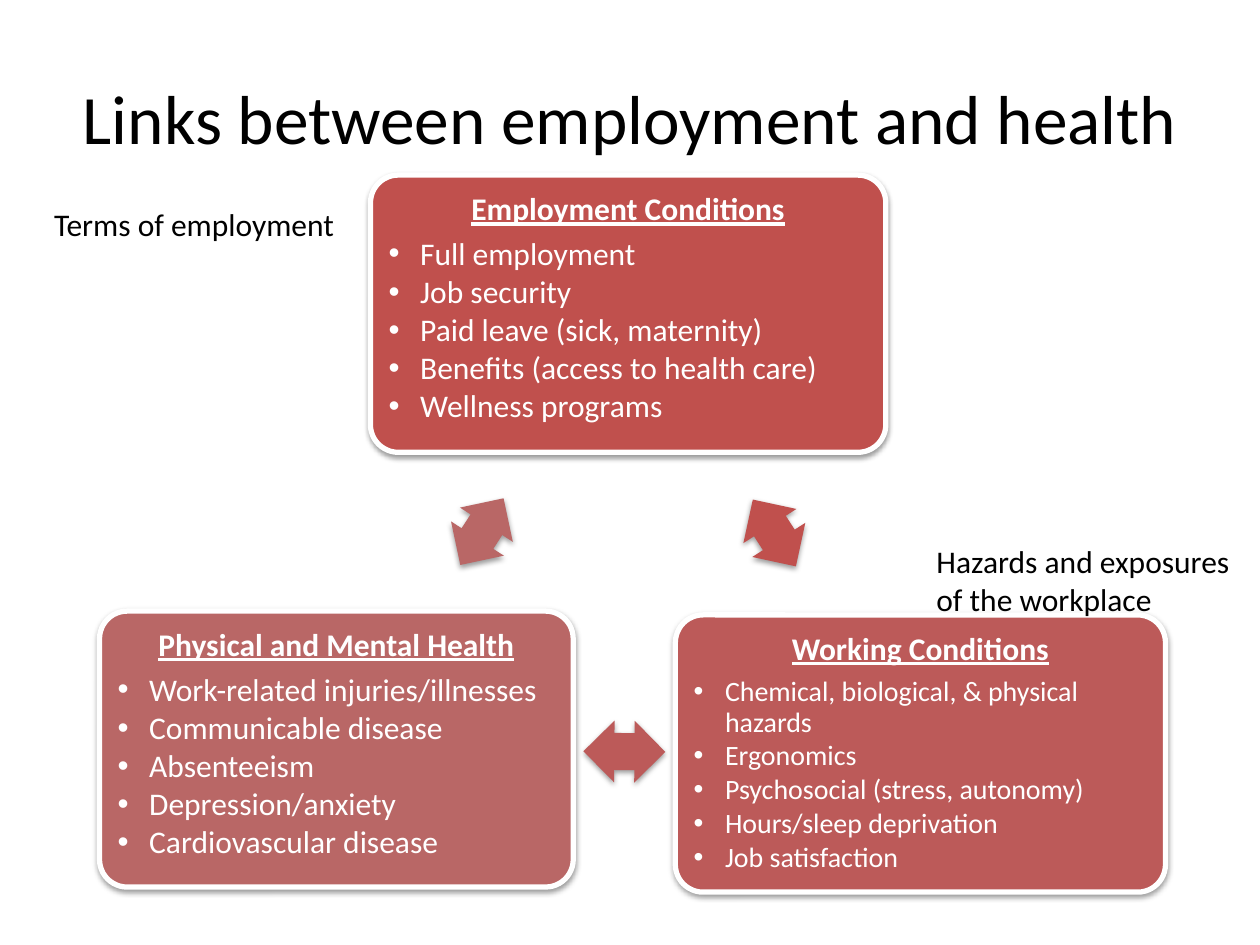
from lxml import etree
from pptx import Presentation
from pptx import util as u
from pptx.dml.color import RGBColor
from pptx.enum import shapes, text
from pptx.oxml import ns

FONT = "Calibri"
WHITE, BLACK = "FFFFFF", "000000"
RED, ROSE, DUSTY_ROSE = "C0504D", "BC5A59", "B96766"

CARDS = [
    ((211.7, 100.1, 294.5, 158.4), RED, "Employment Conditions", 18,
     ["Full employment", "Job security", "Paid leave (sick, maternity)",
      "Benefits (access to health care)", "Wellness programs"]),
    ((385.9, 351.4, 280.1, 158.4), ROSE, "Working Conditions", 16,
     ["Chemical, biological, & physical hazards", "Ergonomics",
      "Psychosocial (stress, autonomy)", "Hours/sleep deprivation",
      "Job satisfaction"]),
    ((56.9, 349.2, 270.7, 157.7), DUSTY_ROSE, "Physical and Mental Health", 18,
     ["Work-related injuries/illnesses", "Communicable disease", "Absenteeism",
      "Depression/anxiety", "Cardiovascular disease"]),
]
ARROWS = [
    ((419.8, 286.6, 45.4, 36), 57.2, RED),
    ((333.4, 411.8, 46.8, 35.3), 180.5, ROSE),
    ((252.7, 285.8, 45.4, 36), 303, DUSTY_ROSE),
]
LABELS = [
    ((23.8, 113.8, 192, 29), "Terms of employment"),
    ((528, 306, 192, 51), "Hazards and exposures of the workplace"),
]


def color(value):
    return RGBColor.from_string(value)


def points(box):
    return [u.Pt(length) for length in box]


def add_run(paragraph, words, size, ink, heading=False):
    run = paragraph.add_run()
    run.text = words
    run.font.name = FONT
    run.font.size = u.Pt(size)
    run.font.bold = heading
    run.font.underline = heading
    run.font.color.rgb = color(ink)


def add_bullet(paragraph):
    properties = paragraph._p.get_or_add_pPr()
    properties.set("marL", str(u.Pt(18)))
    properties.set("indent", str(-u.Pt(18)))
    etree.SubElement(properties, ns.qn("a:buFont"), typeface="Arial")
    etree.SubElement(properties, ns.qn("a:buChar"), char="•")


def add_shadow(shape):
    shape.shadow.inherit = False
    effects = shape._element.spPr.find(ns.qn("a:effectLst"))
    shadow = etree.SubElement(
        effects, ns.qn("a:outerShdw"), blurRad=str(u.Pt(3.1)),
        dist=str(u.Pt(1.6)), dir="5400000", rotWithShape="0")
    ink = etree.SubElement(shadow, ns.qn("a:srgbClr"), val=BLACK)
    etree.SubElement(ink, ns.qn("a:alpha"), val="38000")


def add_filled_shape(slide, kind, box, fill, adjustments):
    shape = slide.shapes.add_shape(kind, *points(box))
    for index, value in enumerate(adjustments):
        shape.adjustments[index] = value
    shape.fill.solid()
    shape.fill.fore_color.rgb = color(fill)
    add_shadow(shape)
    return shape


def add_card(slide, box, fill, heading, size, items):
    card = add_filled_shape(
        slide, shapes.MSO_SHAPE.ROUNDED_RECTANGLE, box, fill, [0.1])
    card.line.color.rgb = color(WHITE)
    card.line.width = u.Pt(3)
    frame = card.text_frame
    frame.word_wrap = True
    frame.vertical_anchor = text.MSO_ANCHOR.TOP
    frame.margin_left = frame.margin_right = u.Pt(5.8)
    frame.margin_top = frame.margin_bottom = u.Pt(5.8)
    paragraph = frame.paragraphs[0]
    paragraph.alignment = text.PP_ALIGN.CENTER
    paragraph.line_spacing = 0.9
    paragraph.space_after = u.Pt(6)
    add_run(paragraph, heading, 18, WHITE, heading=True)
    for item in items:
        paragraph = frame.add_paragraph()
        paragraph.level = 1
        paragraph.alignment = text.PP_ALIGN.LEFT
        paragraph.line_spacing = 0.9
        paragraph.space_after = u.Pt(size * 0.13)
        add_bullet(paragraph)
        add_run(paragraph, item, size, WHITE)


def add_arrow(slide, box, rotation, fill):
    arrow = add_filled_shape(
        slide, shapes.MSO_SHAPE.LEFT_RIGHT_ARROW, box, fill, [0.6, 0.5])
    arrow.line.fill.background()
    arrow.rotation = rotation


def add_text(slide, box, words, size, alignment=text.PP_ALIGN.LEFT,
             anchor=text.MSO_ANCHOR.TOP):
    frame = slide.shapes.add_textbox(*points(box)).text_frame
    frame.word_wrap = True
    frame.vertical_anchor = anchor
    paragraph = frame.paragraphs[0]
    paragraph.alignment = alignment
    add_run(paragraph, words, size, BLACK)


def main():
    presentation = Presentation()
    presentation.slide_width, presentation.slide_height = u.Pt(720), u.Pt(540)
    slide = presentation.slides.add_slide(presentation.slide_layouts[6])
    add_text(slide, (36, 21.6, 648, 90), "Links between employment and health",
             39.6, text.PP_ALIGN.CENTER, text.MSO_ANCHOR.MIDDLE)
    for card, arrow in zip(CARDS, ARROWS):
        add_card(slide, *card)
        add_arrow(slide, *arrow)
    for box, words in LABELS:
        add_text(slide, box, words, 18)
    presentation.save("out.pptx")


if __name__ == "__main__":
    main()
